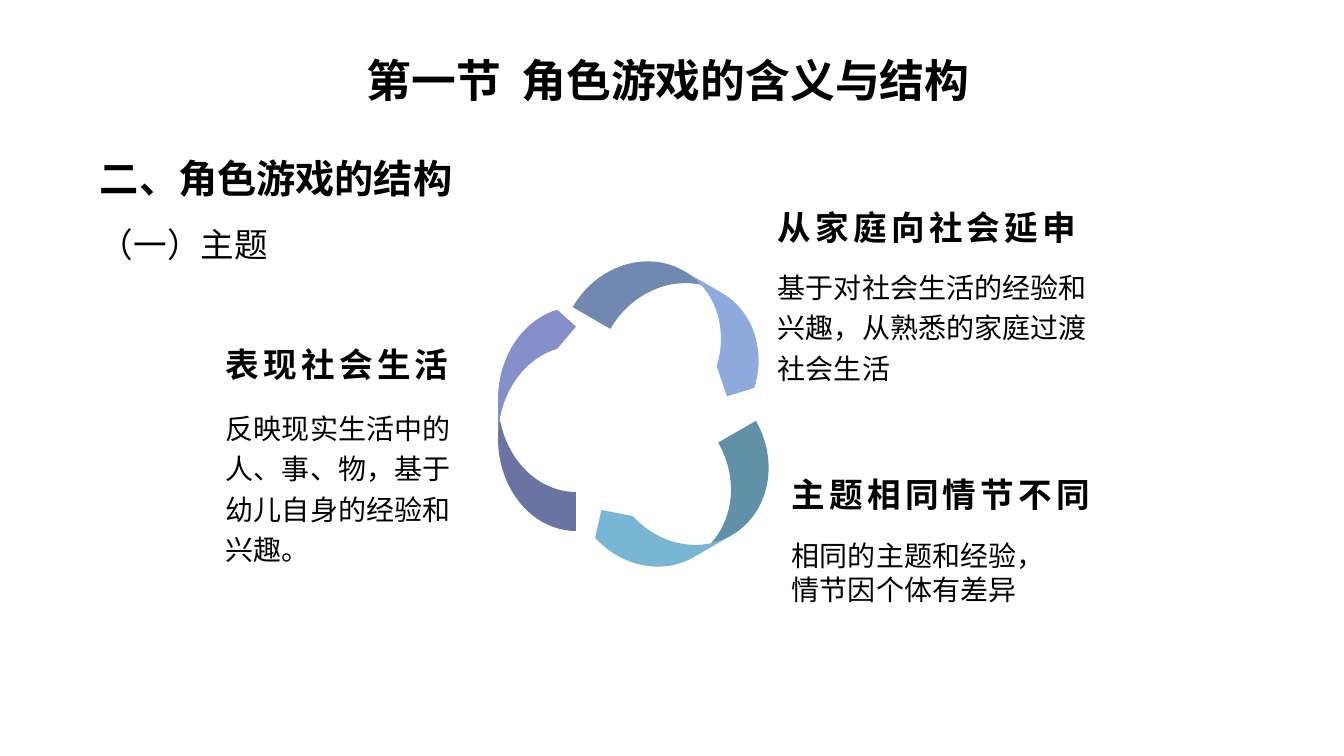
from lxml.etree import SubElement
from pptx import Presentation
from pptx.dml.color import RGBColor
from pptx.enum.shapes import MSO_SHAPE as Shape
from pptx.enum.text import MSO_ANCHOR as Anchor, PP_ALIGN as Align
from pptx.oxml.ns import qn
from pptx.util import Pt

PX = 914400 / 100.8
BLACK = RGBColor(0x00, 0x00, 0x00)
PERIWINKLE = RGBColor(0x8E, 0xAA, 0xDC)
SKY = RGBColor(0x79, 0xB6, 0xD3)
VIOLET = RGBColor(0x85, 0x90, 0xCA)
SANS = "Noto Sans CJK SC"

TITLE = {"size": Pt(32), "bold": True}
SECTION = {"size": Pt(28), "bold": True, "name": "Arial"}
TOPIC = {"size": Pt(24), "bold": False}
HEADING = {"size": Pt(24), "bold": True}
BODY = {"size": Pt(20), "bold": False}

POINTS = [
    ((216, 331, 292, 53), (216, 400, 256, 134), "表现社会生活",
     ["反映现实生活中的人、事、物，基于幼儿自身的经验和兴趣。"], 1.2),
    ((768, 194, 383, 62), (768, 259, 335, 131), "从家庭向社会延申",
     ["基于对社会生活的经验和兴趣，从熟悉的家庭过渡社会生活"], 1.2),
    ((782, 461, 372, 49), (782, 534, 323, 115), "主题相同情节不同",
     ["相同的主题和经验，", "情节因个体有差异"], None),
]
ARROWS = [
    ((581, 276, 200, 87), 30, PERIWINKLE),
    ((591, 465, 200, 87), 150, SKY),
    ((425, 380, 224, 78), 270, VIOLET),
]


def emu(lengths):
    return [round(length * PX) for length in lengths]


def add_text(page, box, lines, line_spacing=None, align=None, anchor=Anchor.TOP, tracking=None):
    frame = page.shapes.add_textbox(*emu(box)).text_frame
    frame.word_wrap = True
    frame.vertical_anchor = anchor
    for index, (words, look) in enumerate(lines):
        para = frame.add_paragraph() if index else frame.paragraphs[0]
        para.line_spacing = line_spacing
        para.alignment = align
        span = para.add_run()
        span.text = words
        for key, value in ({"name": SANS} | look).items():
            setattr(span.font, key, value)
        span.font.color.rgb = BLACK
        props = span.font._element
        SubElement(props, qn("a:ea")).set("typeface", SANS)
        if tracking:
            props.set("spc", str(tracking * 100))


def add_point(page, heading_box, body_box, heading, lines, line_spacing):
    add_text(page, body_box, [(line, BODY) for line in lines], line_spacing)
    add_text(page, heading_box, [(heading, HEADING)], 1.2, tracking=3)


def add_arrow(page, box, rotation, color):
    arrow = page.shapes.add_shape(Shape.CURVED_DOWN_ARROW, *emu(box))
    for index, value in enumerate((0.5, 0.5, 0.24)):
        arrow.adjustments[index] = value
    arrow.rotation = rotation
    arrow.shadow.inherit = False
    arrow.fill.solid()
    arrow.fill.fore_color.rgb = color
    arrow.line.fill.background()


def main():
    deck = Presentation()
    deck.slide_width, deck.slide_height = emu((1344, 756))
    page = deck.slides.add_slide(deck.slide_layouts[6])
    for point in POINTS:
        add_point(page, *point)
    for arrow in ARROWS:
        add_arrow(page, *arrow)
    add_text(page, (90, 134, 1159, 131),
             [("二、角色游戏的结构", SECTION), ("（一）主题", TOPIC)], Pt(44.6))
    add_text(page, (143, 41, 1051, 77), [("第一节  角色游戏的含义与结构", TITLE)],
             align=Align.CENTER, anchor=Anchor.MIDDLE)
    deck.save("out.pptx")


if __name__ == "__main__":
    main()
